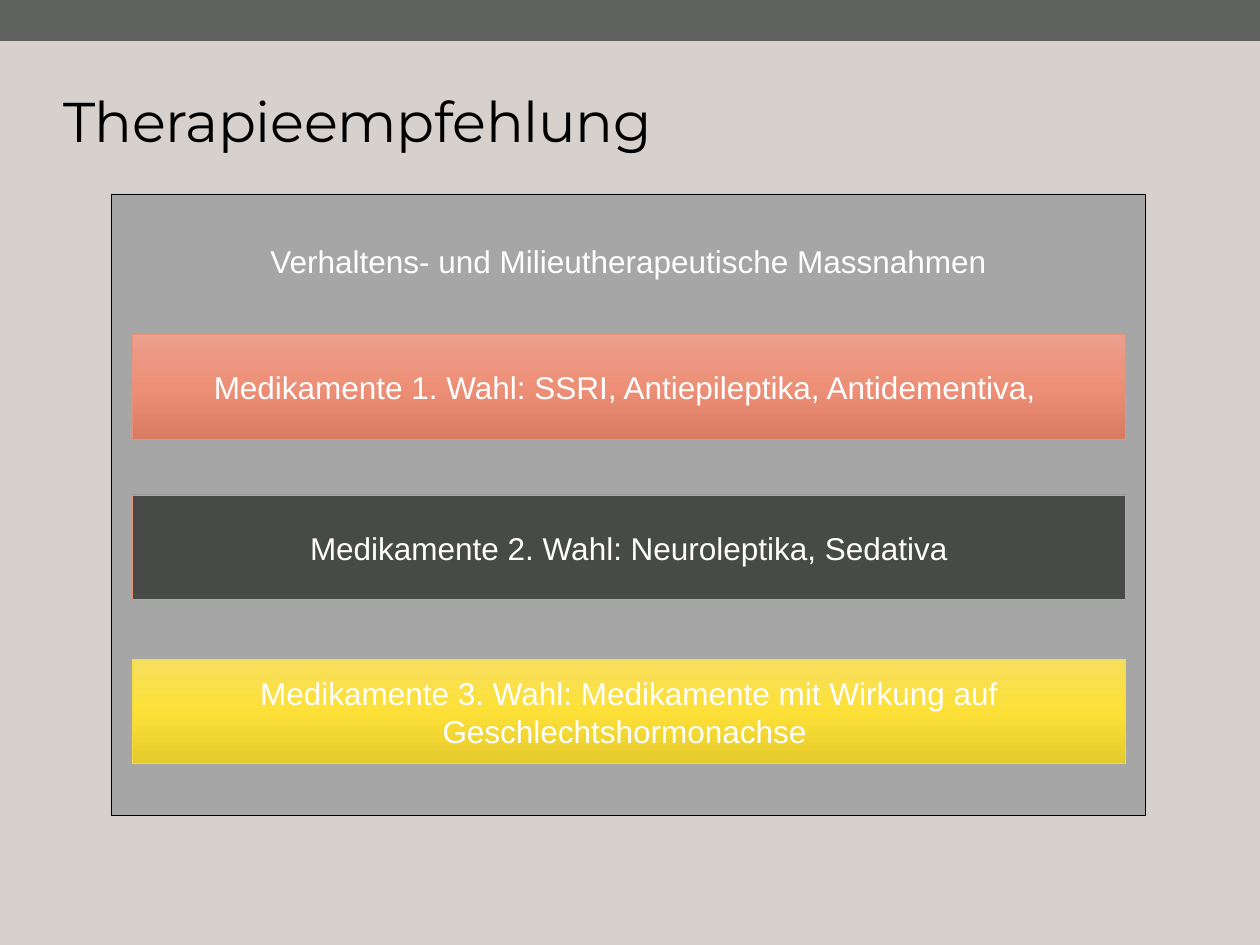
from copy import deepcopy

from pptx import Presentation
from pptx.dml.color import RGBColor
from pptx.enum.shapes import MSO_SHAPE
from pptx.enum.text import MSO_ANCHOR, PP_ALIGN
from pptx.oxml.ns import qn
from pptx.util import Pt

EMU_PER_PX = 914400 // 126
SLIDE_WIDTH, SLIDE_HEIGHT = 1260, 945
STEPS = [
    (140, "Medikamente 1. Wahl: SSRI, Antiepileptika, Antidementiva, ",
     ["EC9F8D", "ED8F77", "DA7B63"], "E8927C"),
    (301, "Medikamente 2. Wahl: Neuroleptika, Sedativa",
     ["474A47"], "E8927C"),
    (465, "Medikamente 3. Wahl: Medikamente mit Wirkung auf Geschlechtshormonachse ",
     ["F7DF5F", "FDE037", "E5CA2D"], "F4DA40"),
]


def px(length):
    return length * EMU_PER_PX


def color(value):
    return RGBColor.from_string(value)


def place(shape, left, top, width, height):
    shape.left, shape.top = px(left), px(top)
    shape.width, shape.height = px(width), px(height)


def paint(shape, colors):
    if len(colors) == 1:
        shape.fill.solid()
        shape.fill.fore_color.rgb = color(colors[0])
        return
    shape.fill.gradient()
    shape.fill.gradient_angle = 270
    stop_list = shape._element.spPr.find(qn("a:gradFill")).find(qn("a:gsLst"))
    stop_list.append(deepcopy(stop_list[0]))
    for index, (stop, value) in enumerate(zip(shape.fill.gradient_stops, colors)):
        stop.position = index / (len(colors) - 1)
        stop.color.rgb = color(value)


def add_box(slide, left, top, width, height, colors, line_color=None):
    shape = slide.shapes.add_shape(
        MSO_SHAPE.RECTANGLE, px(left), px(top), px(width), px(height))
    shape.shadow.inherit = False
    paint(shape, colors)
    if line_color:
        shape.line.color.rgb = color(line_color)
        shape.line.width = Pt(0.5)
    else:
        shape.line.fill.background()
    return shape


def write_label(shape, text, anchor):
    frame = shape.text_frame
    frame.word_wrap = True
    frame.vertical_anchor = anchor
    paragraph = frame.paragraphs[0]
    paragraph.text = text
    paragraph.alignment = PP_ALIGN.CENTER
    paragraph.font.name = "Arial"
    paragraph.font.size = Pt(18)
    paragraph.font.color.rgb = color("FFFFFF")


def fill_title(slide, left, top, width, height):
    title = slide.shapes.title
    place(title, left, top, width, height)
    frame = title.text_frame
    frame.margin_left = frame.margin_right = 0
    frame.margin_top = frame.margin_bottom = 0
    frame.word_wrap = True
    frame.vertical_anchor = MSO_ANCHOR.BOTTOM
    paragraph = frame.paragraphs[0]
    paragraph.text = "Therapieempfehlung"
    paragraph.alignment = PP_ALIGN.LEFT
    paragraph.line_spacing = Pt(36)
    paragraph.font.name = "Montserrat"
    paragraph.font.size = Pt(32)
    paragraph.font.color.rgb = color("000000")
    paragraph.runs[0].font._element.set("spc", "-20")


def add_therapy_panel(slide, left, top, width, height):
    panel = add_box(slide, left, top, width, height, ["A6A6A6"], "000000")
    panel.text_frame.margin_top = px(48)
    write_label(panel, "Verhaltens- und Milieutherapeutische Massnahmen", MSO_ANCHOR.TOP)
    for offset, text, colors, line_color in STEPS:
        step = add_box(slide, left + 21, top + offset, width - 41, 105, colors, line_color)
        write_label(step, text, MSO_ANCHOR.MIDDLE)


def main():
    presentation = Presentation()
    presentation.slide_width = px(SLIDE_WIDTH)
    presentation.slide_height = px(SLIDE_HEIGHT)
    slide = presentation.slides.add_slide(presentation.slide_layouts[5])
    slide.background.fill.solid()
    slide.background.fill.fore_color.rgb = color("D6D1CD")
    add_box(slide, 0, 0, SLIDE_WIDTH, 41, ["5F625F"])
    fill_title(slide, 63, 38, 1134, 116)
    add_therapy_panel(slide, 111, 194, 1035, 622)
    presentation.save("out.pptx")


if __name__ == "__main__":
    main()
